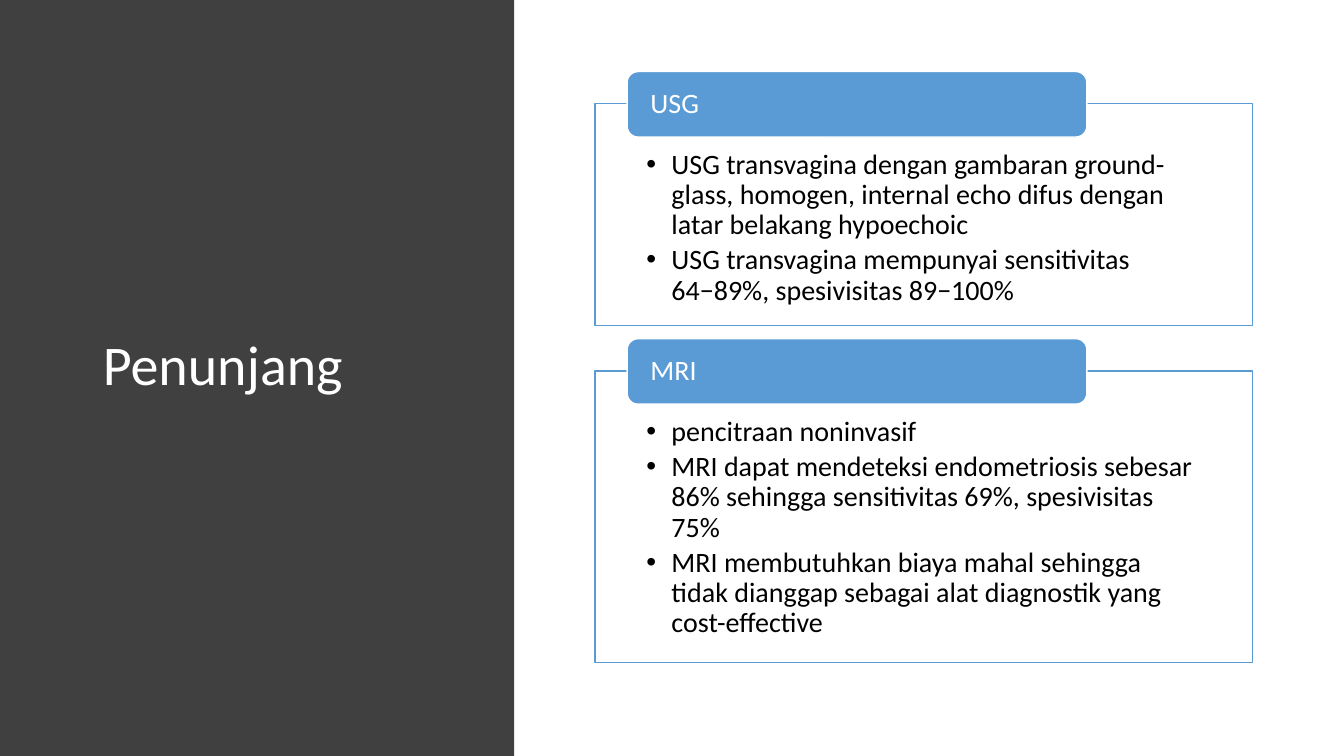
from lxml.etree import SubElement
from pptx import Presentation
from pptx.dml.color import RGBColor
from pptx.enum.shapes import MSO_SHAPE
from pptx.enum.text import MSO_ANCHOR, MSO_AUTO_SIZE, PP_ALIGN
from pptx.oxml.ns import qn
from pptx.util import Inches, Pt


def rgb(value):
    return RGBColor.from_string(value)


class Deck:
    font = "Calibri"
    dark, blue, white, black = "404040", "5B9BD5", "FFFFFF", "000000"

    def __init__(self, prs):
        self.s = prs.slides.add_slide(prs.slide_layouts[5])

    def shape(self, kind, x, y, w, h, fill, line=None):
        sp = self.s.shapes.add_shape(kind, Inches(x), Inches(y), Inches(w), Inches(h))
        sp.shadow.inherit = False
        sp.fill.solid()
        sp.fill.fore_color.rgb = rgb(fill)
        if line:
            sp.line.color.rgb = rgb(line)
            sp.line.width = Pt(1)
        else:
            sp.line.fill.background()
        return sp

    def text(self, sp, text, size, color, anchor, insets):
        tf = sp.text_frame
        tf.text = text
        tf.word_wrap = True
        tf.auto_size = MSO_AUTO_SIZE.NONE
        tf.vertical_anchor = anchor
        tf.margin_left, tf.margin_top, tf.margin_right, tf.margin_bottom = map(Inches, insets)
        for p in tf.paragraphs:
            p.alignment = PP_ALIGN.LEFT
            p.line_spacing = 0.9
            for r in p.runs:
                r.font.name = self.font
                r.font.size = Pt(size)
                r.font.color.rgb = rgb(color)
        return tf

    def title(self, text):
        panel = self.shape(MSO_SHAPE.RECTANGLE, 0, 0, 5.1, 7.5, self.dark)
        sp = self.s.shapes.title
        sp.left, sp.top, sp.width, sp.height = map(Inches, (0.92, 0.68, 3.67, 5.92))
        self.text(sp, text, 40, self.white, MSO_ANCHOR.MIDDLE, (0.1, 0.05, 0.1, 0.05))
        sp._element.addprevious(panel._element)

    def bullets(self, tf):
        for p in tf.paragraphs:
            p.space_after = Pt(3.5)
            pPr = p._p.get_or_add_pPr()
            pPr.set("marL", str(Inches(0.25)))
            pPr.set("indent", str(Inches(-0.25)))
            SubElement(pPr, qn("a:buFont"), typeface="Arial")
            SubElement(pPr, qn("a:buChar"), char="•")

    def section(self, y, h, heading, points):
        box = self.shape(MSO_SHAPE.RECTANGLE, 5.9, y, 6.52, h, self.white, self.blue)
        color = box._element.spPr.find(qn("a:solidFill"))[0]
        SubElement(color, qn("a:alpha"), val="90000")
        tf = self.text(box, "\n".join(points), 20, self.black, MSO_ANCHOR.TOP,
                       (0.51, 0.46, 0.51, 0.16))
        self.bullets(tf)
        label = self.shape(MSO_SHAPE.ROUNDED_RECTANGLE, 6.22, y - 0.32, 4.56, 0.65,
                           self.blue, self.white)
        self.text(label, heading, 20, self.white, MSO_ANCHOR.MIDDLE, (0.2, 0, 0.2, 0))


def main():
    prs = Presentation()
    prs.slide_width, prs.slide_height = Inches(13.33), Inches(7.5)
    deck = Deck(prs)
    deck.title("Penunjang")
    deck.section(1.03, 2.2, "USG", [
        "USG transvagina dengan gambaran ground-glass, homogen, internal echo difus dengan latar belakang hypoechoic",
        "USG transvagina mempunyai sensitivitas 64−89%, spesivisitas 89−100%",
    ])
    deck.section(3.68, 2.89, "MRI", [
        "pencitraan noninvasif",
        "MRI dapat mendeteksi endometriosis sebesar 86% sehingga sensitivitas 69%, spesivisitas 75%",
        "MRI membutuhkan biaya mahal sehingga tidak dianggap sebagai alat diagnostik yang cost-effective",
    ])
    prs.save("out.pptx")


if __name__ == "__main__":
    main()
